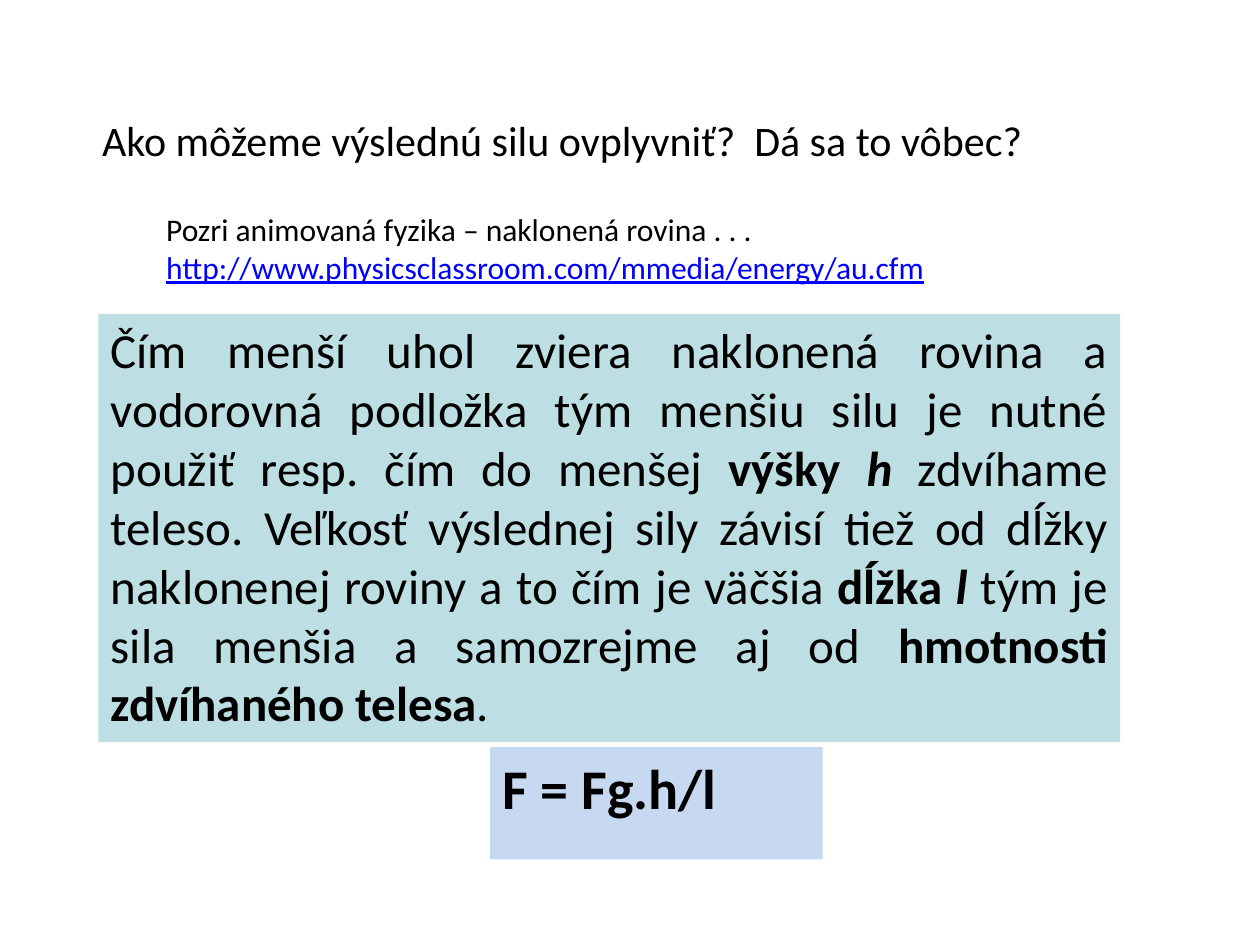
"""Build a slide on the force needed along an inclined plane."""
from dataclasses import dataclass

from pptx import Presentation
from pptx import util as u
from pptx.dml.color import RGBColor
from pptx.enum import text


@dataclass(frozen=True)
class Theme:
    font: str = "Calibri"
    ink: str = "000000"
    link: str = "0000FF"
    teal: str = "BDDFE3"
    blue: str = "C6D9F1"
    title: int = 24
    source: int = 18
    body: int = 28
    formula: int = 32


THEME = Theme()
PLAIN, BOLD, BOLD_ITALIC, LINK = "plain", "bold", "bold italic", "link"

QUESTION = [[("Ako môžeme výslednú silu ovplyvniť?  Dá sa to vôbec?", PLAIN)]]
SOURCE = [
    [("Pozri animovaná fyzika – naklonená rovina . . .", PLAIN)],
    [("http://www.physicsclassroom.com/mmedia/energy/au.cfm", LINK)],
]
EXPLANATION = [[
    ("Čím menší uhol zviera naklonená rovina a vodorovná podložka tým menšiu "
     "silu je nutné použiť resp. čím do menšej ", PLAIN),
    ("výšky ", BOLD),
    ("h", BOLD_ITALIC),
    (" zdvíhame teleso. Veľkosť výslednej sily závisí tiež od dĺžky naklonenej "
     "roviny a to čím je väčšia ", PLAIN),
    ("dĺžka ", BOLD),
    ("l", BOLD_ITALIC),
    (" tým je sila menšia a samozrejme aj od ", PLAIN),
    ("hmotnosti zdvíhaného telesa", BOLD),
    (".", PLAIN),
]]
FORMULA = [[("F = Fg.h/l", BOLD)]]

SLIDE_SIZE = (u.Inches(10), u.Inches(7.5))
PERCENT_PLACES = {
    "question": (7.1, 5.87, 85.8, 17.87),
    "source": (12.2, 21.6, 62.9, 13.47),
    "explanation": (7.8, 33.2, 81.1, 45.33),
    "formula": (38.9, 79.07, 26.4, 11.87),
}


def place(name):
    """Turn shares of the slide into left, top, width and height."""
    return [int(share / 100 * SLIDE_SIZE[index % 2])
            for index, share in enumerate(PERCENT_PLACES[name])]


def write(frame, paragraphs, size, align=text.PP_ALIGN.LEFT):
    """Write styled paragraphs into a text frame."""
    for index, spans in enumerate(paragraphs):
        para = frame.paragraphs[0] if index == 0 else frame.add_paragraph()
        para.alignment = align
        for words, style in spans:
            span = para.add_run()
            span.text = words
            font = span.font
            font.name, font.size = THEME.font, u.Pt(size)
            font.bold = style in (BOLD, BOLD_ITALIC)
            font.italic = style == BOLD_ITALIC
            font.underline = style == LINK
            color = THEME.link if style == LINK else THEME.ink
            font.color.rgb = RGBColor.from_string(color)


def add_box(page, name, paragraphs, size, fill=None, wrap=True,
            align=text.PP_ALIGN.LEFT):
    """Add a text box, filled when a colour is given."""
    box = page.shapes.add_textbox(*place(name))
    box.text_frame.word_wrap = wrap
    if fill:
        box.fill.solid()
        box.fill.fore_color.rgb = RGBColor.from_string(fill)
    write(box.text_frame, paragraphs, size, align)


def main():
    """Assemble and save the deck."""
    deck = Presentation()
    deck.slide_width, deck.slide_height = SLIDE_SIZE
    page = deck.slides.add_slide(deck.slide_layouts[5])

    title = page.shapes.title
    title.left, title.top, title.width, title.height = place("question")
    title.text_frame.vertical_anchor = text.MSO_ANCHOR.MIDDLE
    write(title.text_frame, QUESTION, THEME.title)

    add_box(page, "source", SOURCE, THEME.source, wrap=False)
    add_box(page, "explanation", EXPLANATION, THEME.body, THEME.teal,
            align=text.PP_ALIGN.JUSTIFY)
    add_box(page, "formula", FORMULA, THEME.formula, THEME.blue)
    deck.save("out.pptx")


if __name__ == "__main__":
    main()
